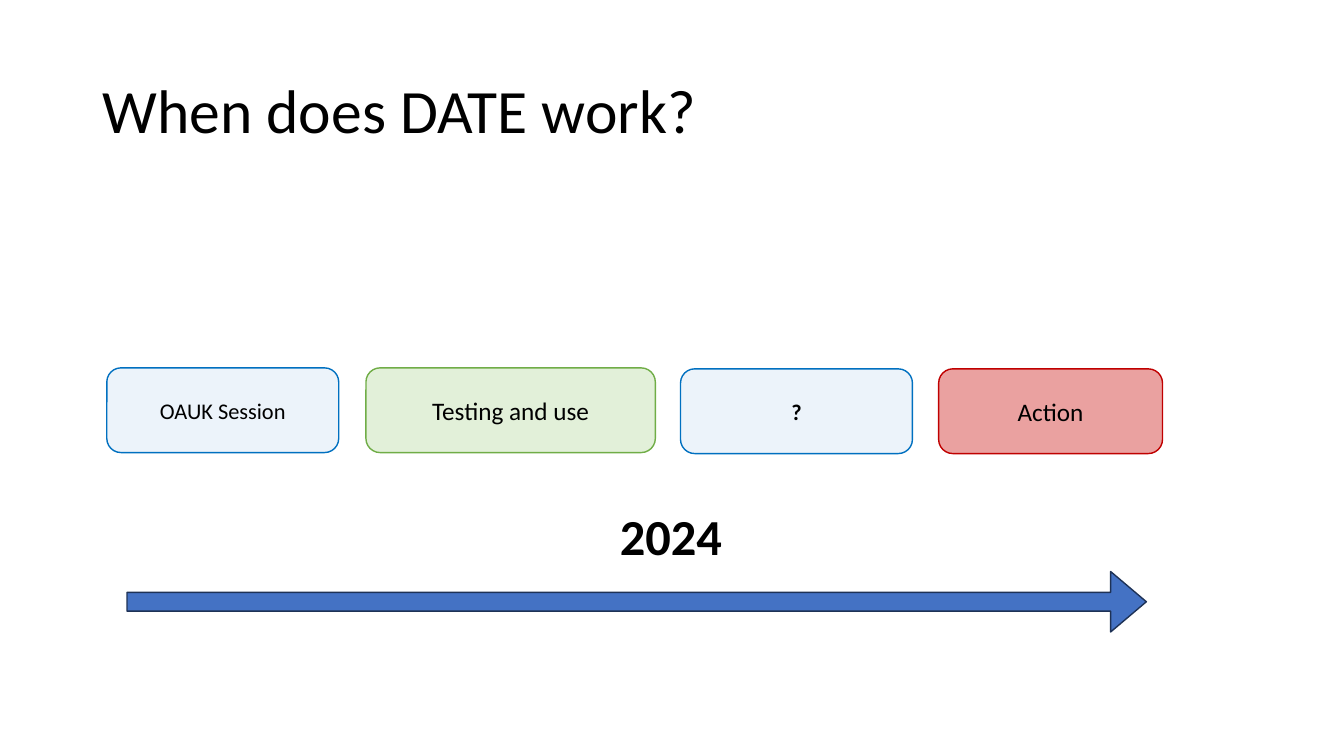
import pptx
import pptx.util
import pptx.dml.color
import pptx.enum.shapes
import pptx.enum.text
import pptx.oxml.ns
import lxml.etree

PX = 9144  # EMU per px, 100 px to the inch
FONT = "Calibri"
COLORS = {
    "text": "000000",
    "session": "DEEBF7", "session_line": "0070C0",
    "testing": "E2F0D9", "testing_line": "70AD47",
    "action": "DB5857", "action_line": "C00000",
    "arrow": "4472C4", "arrow_line": "1E3256",
}
# label, left and top offset, width, colour, opacity in percent, size, bold
STAGES = [
    ("OAUK Session", 0, 0, 230, "session", 56, 16, False),
    ("Testing and use", 257, 0, 287, "testing", 100, 18, False),
    ("?", 569, 1, 230, "session", 56, 16, True),
    ("Action", 825, 1, 222, "action", 56, 18, False),
]
SHAPES = pptx.enum.shapes.MSO_SHAPE
ANCHOR = pptx.enum.text.MSO_ANCHOR
ALIGN = pptx.enum.text.PP_ALIGN


def color(name):
    return pptx.dml.color.RGBColor.from_string(COLORS[name])


def scaled(*lengths):
    return [pptx.util.Emu(length * PX) for length in lengths]


def write(frame, text, size, bold=False, align=ALIGN.LEFT, anchor=ANCHOR.MIDDLE):
    frame.word_wrap = True
    frame.vertical_anchor = anchor
    para = frame.paragraphs[0]
    para.alignment = align
    span = para.add_run()
    span.text = text
    span.font.name = FONT
    span.font.size = pptx.util.Pt(size)
    span.font.bold = bold
    span.font.color.rgb = color("text")
    return para


def add_block(page, kind, box, name, opacity=100):
    block = page.shapes.add_shape(kind, *scaled(*box))
    block.shadow.inherit = False
    block.fill.solid()
    block.fill.fore_color.rgb = color(name)
    block.line.color.rgb = color(name + "_line")
    block.line.width = pptx.util.Pt(1)
    if opacity < 100:
        tag = pptx.oxml.ns.qn("a:srgbClr")
        fill = block.fill._xPr.find(pptx.oxml.ns.qn("a:solidFill")).find(tag)
        alpha = lxml.etree.SubElement(fill, pptx.oxml.ns.qn("a:alpha"))
        alpha.set("val", str(opacity * 1000))
    return block


def add_title(page, left, top, width, height):
    box = page.shapes.add_textbox(*scaled(left, top, width, height))
    para = write(box.text_frame, "When does DATE work?", 44)
    para.line_spacing = 0.9


def add_stages(page, left, top, height):
    for label, across, down, width, name, opacity, size, bold in STAGES:
        box = (left + across, top + down, width, height)
        block = add_block(page, SHAPES.ROUNDED_RECTANGLE, box, name, opacity)
        write(block.text_frame, label, size, bold, ALIGN.CENTER)


def add_timeline(page, left, top, width, height):
    # Year above the arrow
    year = page.shapes.add_textbox(*scaled(left + 479, top, 123, 71))
    write(year.text_frame, "2024", 36, True, anchor=ANCHOR.TOP)
    year.text_frame.word_wrap = False
    year.text_frame.auto_size = pptx.enum.text.MSO_AUTO_SIZE.SHAPE_TO_FIT_TEXT
    # Arrow
    box = (left, top + 71, width, height - 71)
    arrow = add_block(page, SHAPES.RIGHT_ARROW, box, "arrow")
    arrow.adjustments[0] = 0.31
    arrow.adjustments[1] = 0.59


def main():
    deck = pptx.Presentation()
    deck.slide_width, deck.slide_height = scaled(1333, 750)
    page = deck.slides.add_slide(deck.slide_layouts[6])
    add_title(page, 92, 40, 1150, 145)
    add_stages(page, 106, 365, 84)
    add_timeline(page, 126, 496, 1011, 131)
    deck.save("out.pptx")


if __name__ == "__main__":
    main()
